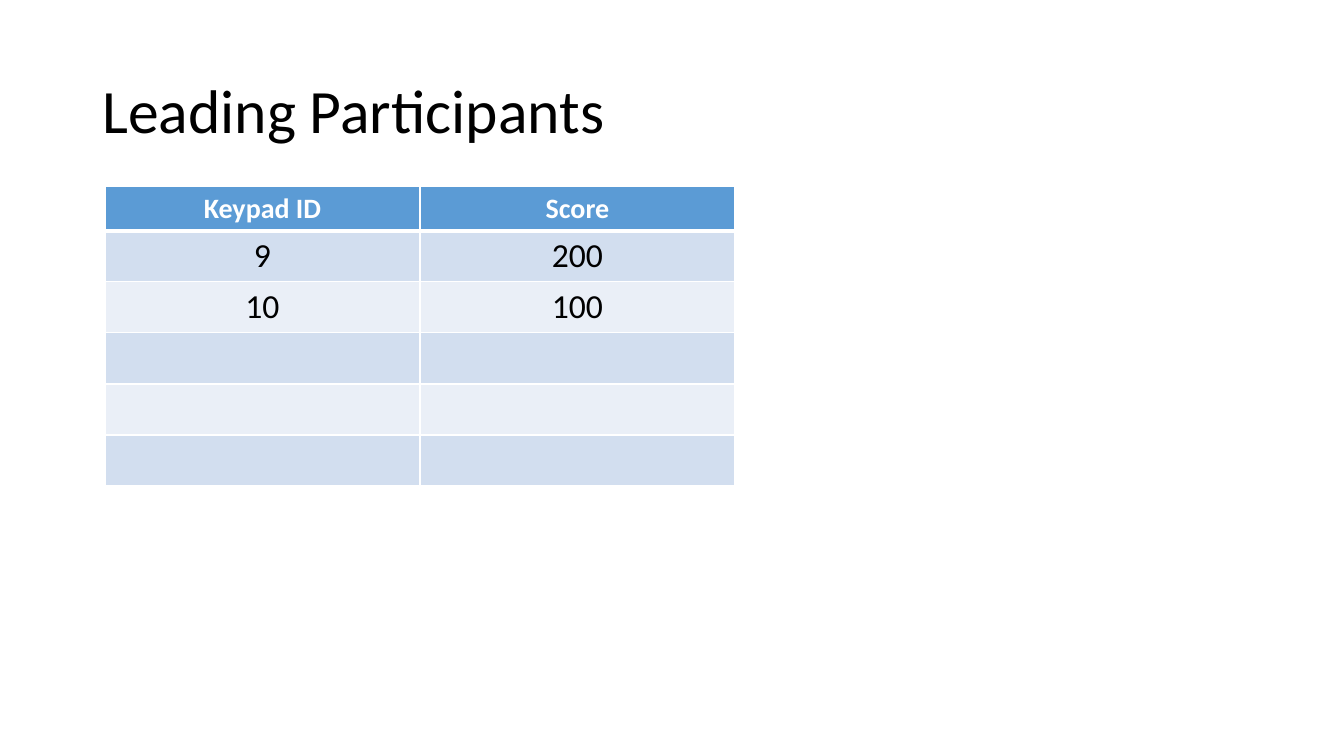
from dataclasses import dataclass

from lxml.etree import SubElement
from pptx import Presentation
from pptx.dml.color import RGBColor
from pptx.enum.text import MSO_ANCHOR as Anchor, PP_ALIGN as Align
from pptx.oxml.ns import qn
from pptx.util import Pt


@dataclass(frozen=True)
class Theme:
    font: str = "Calibri"
    black: str = "000000"
    white: str = "FFFFFF"
    header_fill: str = "5B9BD5"
    band_fills: tuple = ("D2DEEF", "EAEFF7")
    title_size: float = 44
    header_size: float = 20
    body_size: float = 24
    grid_width: float = 1
    header_rule_width: float = 3


THEME = Theme()

HEADER = ("Keypad ID", "Score")
SCORES = (("9", "200"), ("10", "100"))
SCORE_ROWS = 5
COLUMN_WIDTH, HEADER_HEIGHT, SCORE_HEIGHT = 225, 31.6, 36.5


def write_text(paragraph, text, size, color, bold=False):
    run = paragraph.add_run()
    run.text = text
    formats = {"name": THEME.font, "size": Pt(size), "bold": bold}
    for name, value in formats.items():
        setattr(run.font, name, value)
    run.font.color.rgb = RGBColor.from_string(color)


def add_title(slide, text, left, top, width, height):
    shape = slide.shapes.add_textbox(Pt(left), Pt(top), Pt(width), Pt(height))
    frame = shape.text_frame
    for name, value in {"word_wrap": True, "vertical_anchor": Anchor.MIDDLE}.items():
        setattr(frame, name, value)
    paragraph = frame.paragraphs[0]
    paragraph.line_spacing = 0.9
    write_text(paragraph, text, THEME.title_size, THEME.black)


def set_borders(cell, widths):
    properties = cell._tc.get_or_add_tcPr()
    for side, width in widths.items():
        line = SubElement(properties, qn(f"a:ln{side}"), w=str(Pt(width)))
        fill = SubElement(line, qn("a:solidFill"))
        SubElement(fill, qn("a:srgbClr"), val=THEME.white)


def format_cell(cell, row):
    # The heavier rule lies between the header and the first score
    widths = dict.fromkeys("LRTB", THEME.grid_width)
    if row < 2:
        widths["B" if row == 0 else "T"] = THEME.header_rule_width
    set_borders(cell, widths)
    color = THEME.band_fills[(row - 1) % 2] if row else THEME.header_fill
    cell.fill.solid()
    cell.fill.fore_color.rgb = RGBColor.from_string(color)


def add_score_table(slide, left, top):
    row_count, column_count = SCORE_ROWS + 1, len(HEADER)
    height = HEADER_HEIGHT + SCORE_ROWS * SCORE_HEIGHT
    table = slide.shapes.add_table(
        row_count, column_count, Pt(left), Pt(top),
        Pt(column_count * COLUMN_WIDTH), Pt(height),
    ).table
    for column in table.columns:
        column.width = Pt(COLUMN_WIDTH)

    contents = (HEADER, *SCORES)
    for row in range(row_count):
        table.rows[row].height = Pt(SCORE_HEIGHT if row else HEADER_HEIGHT)
        for column in range(column_count):
            cell = table.cell(row, column)
            format_cell(cell, row)
            if row < len(contents):
                paragraph = cell.text_frame.paragraphs[0]
                paragraph.alignment = Align.CENTER
                size, color = (
                    (THEME.body_size, THEME.black) if row
                    else (THEME.header_size, THEME.white)
                )
                write_text(paragraph, contents[row][column], size, color, row == 0)


def main():
    presentation = Presentation()
    presentation.slide_width, presentation.slide_height = Pt(960), Pt(540)
    slide = presentation.slides.add_slide(presentation.slide_layouts[6])

    # Heading
    add_title(slide, "Leading Participants", 66, 28.75, 828, 104.4)

    # Scores
    add_score_table(slide, 75, 133.2)

    presentation.save("out.pptx")


if __name__ == "__main__":
    main()
